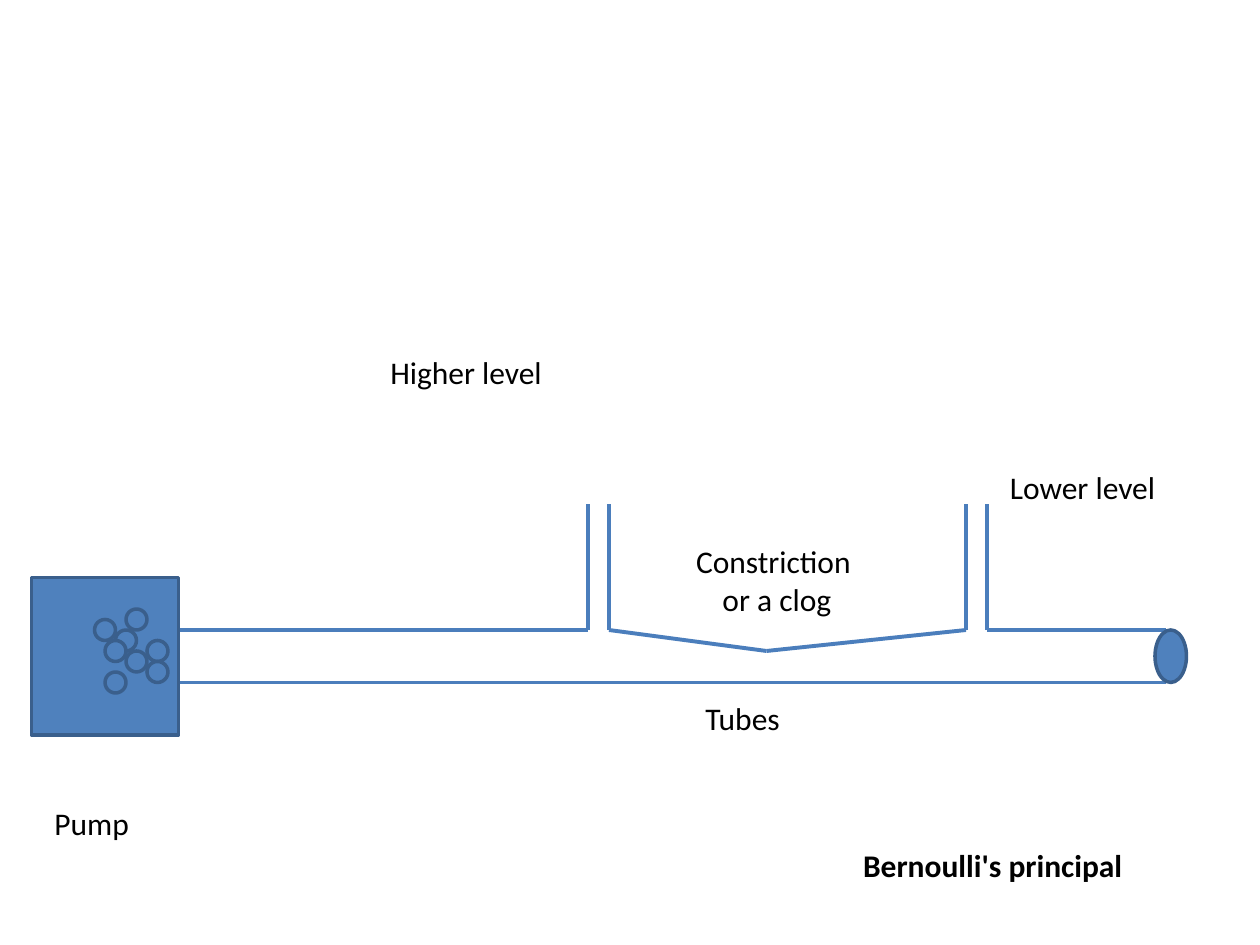
from dataclasses import dataclass

from lxml import etree
from pptx import Presentation
from pptx import util as u
from pptx.dml.color import RGBColor
from pptx.enum import shapes, text
from pptx.oxml import ns

Pt = u.Pt


@dataclass(frozen=True)
class Theme:
    ink: RGBColor = RGBColor(0x00, 0x00, 0x00)
    fill: RGBColor = RGBColor(0x4F, 0x81, 0xBD)
    edge: RGBColor = RGBColor(0x3A, 0x5F, 0x8C)
    pipe: RGBColor = RGBColor(0x4B, 0x7E, 0xBC)
    font: str = "Calibri"
    size: float = 18
    rim: float = 2
    wall: float = 2.25


THEME = Theme()

# Heights and edges that the parts share, in points
TOP, BASE, RISE = 360, 390, 288
START, END = 102, 666
DIP = (438, 372)
LEFT = (336, 348)
RIGHT = (552, 564)
BEAD = 12
BEADS = [(84, 366), (66, 360), (54, 354), (72, 348),
         (60, 384), (60, 366), (84, 378), (72, 372)]


def add_wall(slide, start, end):
    line = slide.shapes.add_connector(
        shapes.MSO_CONNECTOR.STRAIGHT, *(Pt(v) for v in (*start, *end)))
    line.line.color.rgb = THEME.pipe
    line.line.width = Pt(THEME.wall)
    props = line._element.spPr
    etree.SubElement(props, ns.qn("a:effectLst"))


def add_solid(slide, kind, x, y, w, h):
    solid = slide.shapes.add_shape(kind, Pt(x), Pt(y), Pt(w), Pt(h))
    solid.shadow.inherit = False
    solid.fill.solid()
    solid.fill.fore_color.rgb = THEME.fill
    solid.line.color.rgb = THEME.edge
    solid.line.width = Pt(THEME.rim)


def set_text(shape, lines, align=text.PP_ALIGN.LEFT, bold=False):
    frame = shape.text_frame
    frame.word_wrap = False
    frame.auto_size = text.MSO_AUTO_SIZE.SHAPE_TO_FIT_TEXT
    frame.vertical_anchor = text.MSO_ANCHOR.TOP
    for i, words in enumerate(lines):
        para = frame.add_paragraph() if i else frame.paragraphs[0]
        para.alignment = align
        run = para.add_run()
        run.text = words
        run.font.name = THEME.font
        run.font.size = Pt(THEME.size)
        run.font.bold = bold
        run.font.color.rgb = THEME.ink


def add_label(slide, x, y, w, h, *lines, align=text.PP_ALIGN.LEFT):
    box = slide.shapes.add_textbox(Pt(x), Pt(y), Pt(w), Pt(h))
    set_text(box, lines, align)


def add_title(slide, x, y, w, h, words):
    title = slide.shapes.title
    title.left, title.top, title.width, title.height = map(Pt, (x, y, w, h))
    set_text(title, [words], bold=True)


def main():
    deck = Presentation()
    deck.slide_width, deck.slide_height = Pt(720), Pt(540)
    slide = deck.slides.add_slide(deck.slide_layouts[5])
    add_title(slide, 486, 480, 168, 29, "Bernoulli's principal")

    # Main tube, narrowed between the two risers
    for start, end in [
        ((START, TOP), (LEFT[0], TOP)),
        ((START, BASE), (END, BASE)),
        ((LEFT[1], TOP), DIP),
        (DIP, (RIGHT[0], TOP)),
        ((RIGHT[1], TOP), (END, TOP)),
    ]:
        add_wall(slide, start, end)

    # Risers
    for x in LEFT + RIGHT:
        add_wall(slide, (x, TOP), (x, RISE))

    # Outlet, pump and the particles inside it
    kind = shapes.MSO_SHAPE
    add_solid(slide, kind.OVAL, 660, TOP, 18, BASE - TOP)
    add_solid(slide, kind.RECTANGLE, 18, 330, 84, 90)
    for x, y in BEADS:
        add_solid(slide, kind.OVAL, x, y, BEAD, BEAD)

    # Labels
    add_label(slide, 24, 456, 57.5, 29, "Pump")
    add_label(slide, 396, 396, 57.5, 29, "Tubes")
    add_label(slide, 390, 306, 108, 51, "Constriction ", "or a clog",
              align=text.PP_ALIGN.CENTER)
    add_label(slide, 216, 198, 102, 29, "Higher level")
    add_label(slide, 570, 264, 98.5, 29, "Lower level")

    deck.save("out.pptx")


if __name__ == "__main__":
    main()
